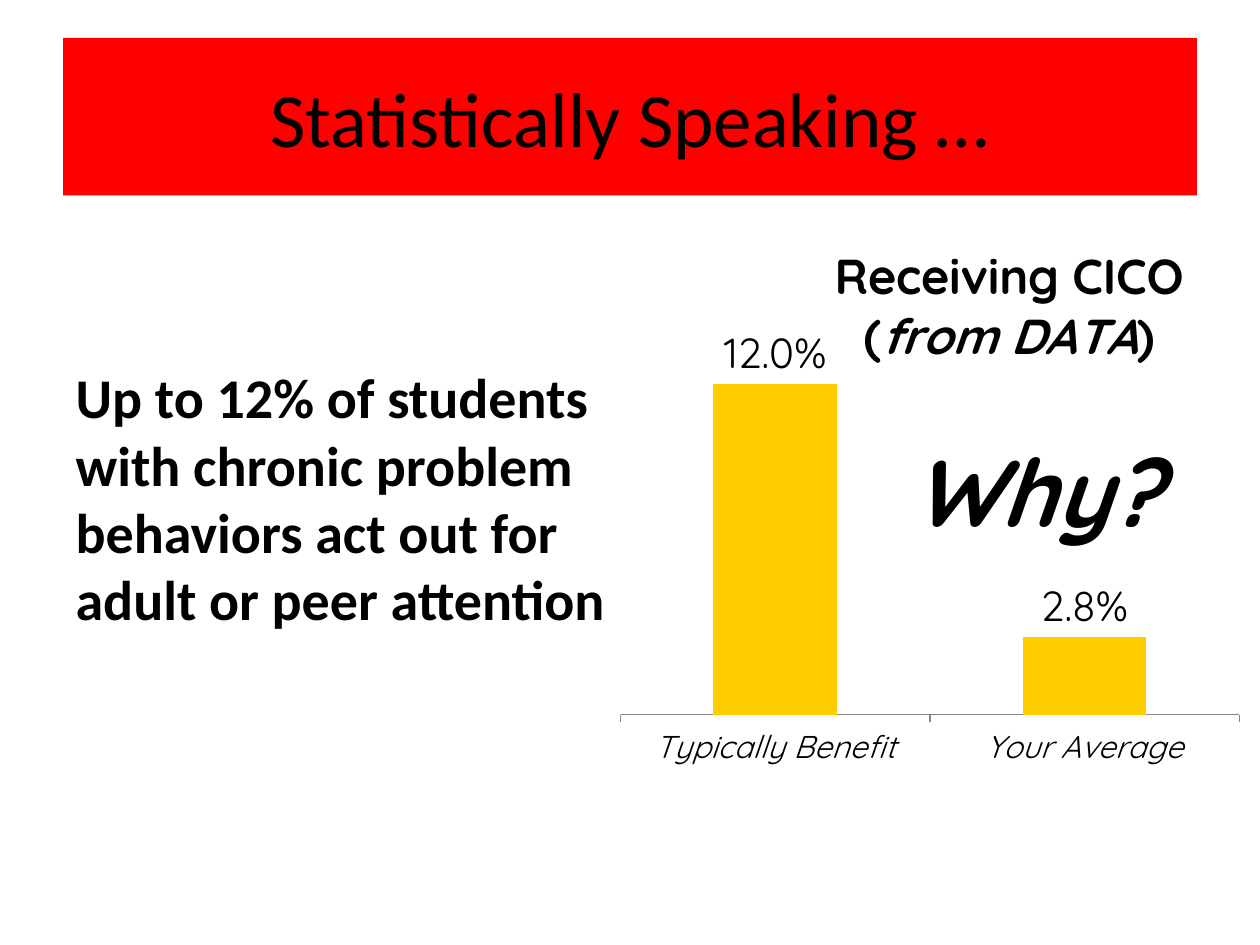
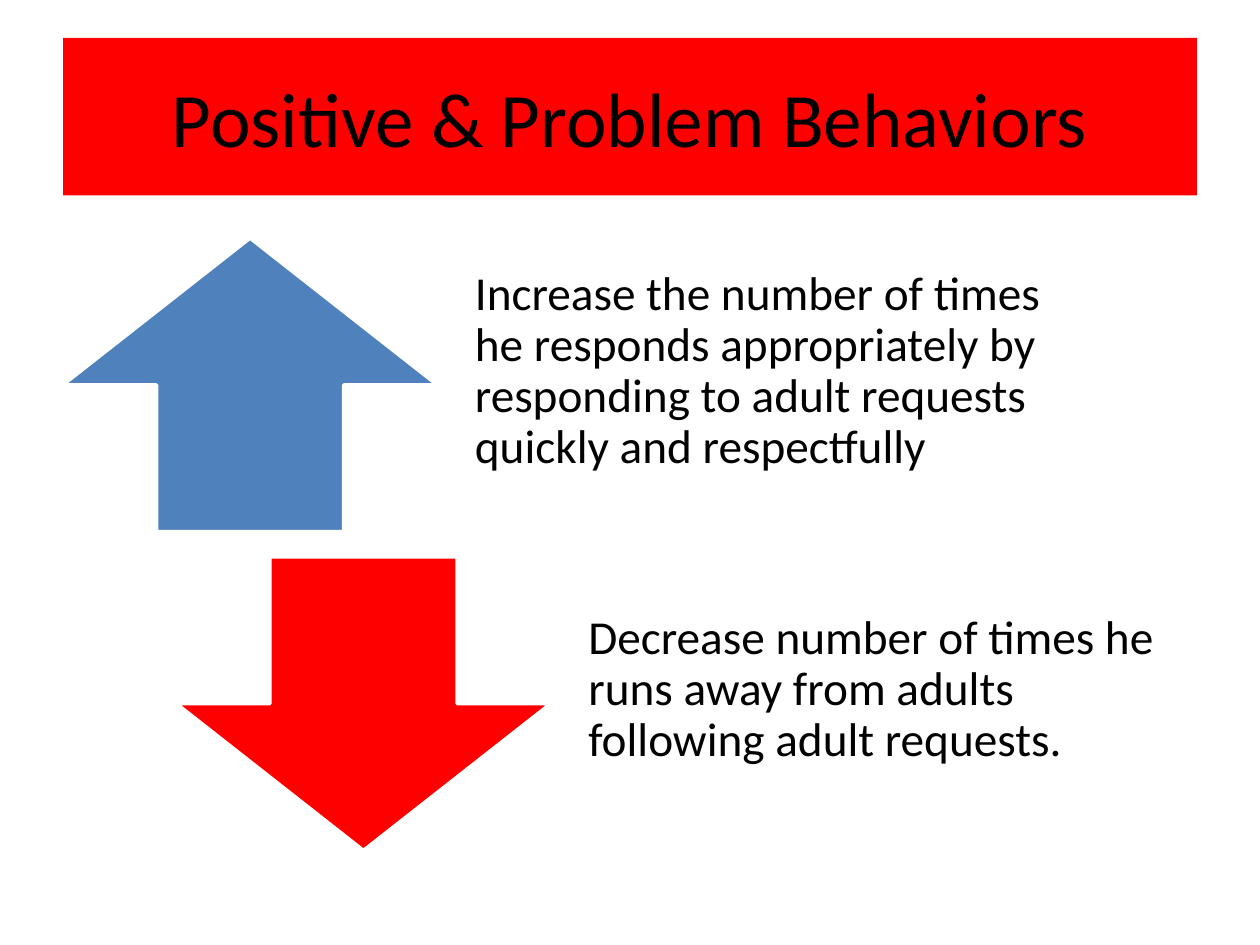
from lxml.etree import SubElement
from pptx import Presentation
from pptx.chart.data import CategoryChartData
from pptx.dml.color import RGBColor
from pptx.enum.chart import XL_CHART_TYPE, XL_LABEL_POSITION, XL_TICK_LABEL_POSITION, XL_TICK_MARK
from pptx.enum.shapes import MSO_SHAPE
from pptx.enum.text import MSO_ANCHOR, MSO_AUTO_SIZE, PP_ALIGN
from pptx.oxml.ns import qn
from pptx.util import Inches, Pt

# Shared look
RED = RGBColor(0xFF, 0x00, 0x00)
BLUE = RGBColor(0x4F, 0x81, 0xBD)
GOLD = RGBColor(0xFF, 0xCC, 0x00)
GREY = RGBColor(0x86, 0x86, 0x86)
BLACK = RGBColor(0x00, 0x00, 0x00)
WHITE = RGBColor(0xFF, 0xFF, 0xFF)
TEXT_FONT = "Calibri"
CHART_FONT = "Quicksand"
TITLE_AND_CONTENT, TITLE_ONLY = 1, 5

# Rows of arrow and text
ROW_TOP, ROW_STEP, ROW_HEIGHT = 1.89, 2.53, 2.33
ROW_LEFT, ROW_INDENT = 0.5, 0.9
ARROW_WIDTH, TEXT_OFFSET, TEXT_WIDTH = 2.97, 3.06, 5.04


def style_font(font, name, size, bold=False, italic=False):
    font.name = name
    font.size = Pt(size)
    font.bold = bold
    font.italic = italic
    font.color.rgb = BLACK


def place(shape, left, top, width, height):
    shape.left, shape.top = Inches(left), Inches(top)
    shape.width, shape.height = Inches(width), Inches(height)


def add_page(deck, layout, title):
    """Add a page with the red title band."""
    page = deck.slides.add_slide(deck.slide_layouts[layout])
    band = page.shapes.title
    place(band, 0.5, 0.3, 9, 1.25)
    band.fill.solid()
    band.fill.fore_color.rgb = RED
    frame = band.text_frame
    frame.text = title
    frame.auto_size = MSO_AUTO_SIZE.NONE
    frame.vertical_anchor = MSO_ANCHOR.MIDDLE
    para = frame.paragraphs[0]
    para.alignment = PP_ALIGN.CENTER
    style_font(para.font, TEXT_FONT, 44)
    return page


def fill_body(page, text):
    """Write the statement in the body placeholder, without a bullet."""
    body = page.placeholders[1]
    place(body, 0.5, 2.83, 4.75, 3.78)
    body.text_frame.text = text
    body.text_frame.auto_size = MSO_AUTO_SIZE.NONE
    para = body.text_frame.paragraphs[0]
    properties = para._p.get_or_add_pPr()
    properties.set("marL", "0")
    properties.set("indent", "0")
    SubElement(properties, qn("a:buNone"))
    para.space_before = Pt(0)
    style_font(para.font, TEXT_FONT, 32, bold=True)


def set_layout(part, position, **values):
    """Give a chart part a manual layout, in fractions of the chart."""
    for previous in part.findall(qn("c:layout")):
        part.remove(previous)
    layout = SubElement(part, qn("c:layout"))
    part.insert(position, layout)
    manual = SubElement(layout, qn("c:manualLayout"))
    for tag, value in values.items():
        SubElement(manual, qn(f"c:{tag}")).set("val", str(value))


def add_chart_title(chart):
    title = chart.chart_title
    frame = title.text_frame
    lines = [[("Receiving CICO", False)],
             [("(", False), ("from DATA", True), (")", False)]]
    for index, spans in enumerate(lines):
        para = frame.add_paragraph() if index else frame.paragraphs[0]
        for text, italic in spans:
            span = para.add_run()
            span.text = text
            style_font(span.font, CHART_FONT, 28, bold=True, italic=italic)
    # The layout follows the title text
    set_layout(title._element, 1, xMode="edge", yMode="edge", x=0.34, y=0.02)


def add_benefit_chart(page):
    data = CategoryChartData(number_format="0.0%")
    data.categories = ["Typically Benefit", "Your Average"]
    data.add_series("Series 1", [0.12, 0.028])
    chart = page.shapes.add_chart(
        XL_CHART_TYPE.COLUMN_CLUSTERED, Inches(4.92), Inches(1.81),
        Inches(4.92), Inches(4.44), data).chart
    chart.has_legend = False
    style_font(chart.font, CHART_FONT, 18)
    add_chart_title(chart)

    # Axes
    values = chart.value_axis
    values.minimum_scale, values.maximum_scale = 0, 0.14
    values.has_major_gridlines = False
    values.visible = False
    categories = chart.category_axis
    categories.major_tick_mark = XL_TICK_MARK.OUTSIDE
    categories.tick_label_position = XL_TICK_LABEL_POSITION.LOW
    categories.format.line.color.rgb = GREY
    style_font(categories.tick_labels.font, CHART_FONT, 18, italic=True)

    # Columns and their labels
    plot = chart.plots[0]
    plot.gap_width = 150
    plot.vary_by_categories = False
    columns = plot.series[0].format.fill
    columns.solid()
    columns.fore_color.rgb = GOLD
    plot.has_data_labels = True
    labels = plot.data_labels
    labels.show_value = True
    labels.number_format = "0.0%"
    labels.number_format_is_linked = False
    labels.position = XL_LABEL_POSITION.OUTSIDE_END
    style_font(labels.font, CHART_FONT, 24)

    # Plot area
    area = chart._chartSpace.find(f".//{qn('c:plotArea')}")
    set_layout(area, 0, layoutTarget="inner", xMode="edge", yMode="edge",
               x=0, y=0.18, w=1, h=0.69)


def add_question(page, text):
    box = page.shapes.add_textbox(Inches(7.06), Inches(3.39), Inches(2.32), Inches(1.01))
    frame = box.text_frame
    frame.text = text
    frame.word_wrap = False
    frame.auto_size = MSO_AUTO_SIZE.SHAPE_TO_FIT_TEXT
    para = frame.paragraphs[0]
    para.alignment = PP_ALIGN.CENTER
    style_font(para.font, CHART_FONT, 54, bold=True, italic=True)


def add_goal(page, row, arrow_kind, color, text):
    """Add an arrow with its goal; each row steps down and to the right."""
    left, top = ROW_LEFT + row * ROW_INDENT, ROW_TOP + row * ROW_STEP
    arrow = page.shapes.add_shape(arrow_kind, Inches(left), Inches(top),
                                  Inches(ARROW_WIDTH), Inches(ROW_HEIGHT))
    arrow.shadow.inherit = False
    arrow.fill.solid()
    arrow.fill.fore_color.rgb = color
    arrow.line.color.rgb = WHITE
    arrow.line.width = Pt(2)

    box = page.shapes.add_textbox(Inches(left + TEXT_OFFSET), Inches(top),
                                  Inches(TEXT_WIDTH), Inches(ROW_HEIGHT))
    frame = box.text_frame
    frame.text = text
    frame.word_wrap = True
    frame.vertical_anchor = MSO_ANCHOR.MIDDLE
    frame.margin_left = frame.margin_right = frame.margin_bottom = Inches(0.21)
    frame.margin_top = 0
    para = frame.paragraphs[0]
    para.line_spacing = 0.9
    style_font(para.font, TEXT_FONT, 27)


def main():
    deck = Presentation()
    deck.slide_width, deck.slide_height = Inches(10), Inches(7.5)

    # Statistics
    page = add_page(deck, TITLE_AND_CONTENT, "Statistically Speaking …")
    fill_body(page, "Up to 12% of students with chronic problem behaviors "
                    "act out for adult or peer attention")
    add_benefit_chart(page)
    add_question(page, "Why?")

    # Behavior goals
    page = add_page(deck, TITLE_ONLY, "Positive & Problem Behaviors")
    goals = [
        (MSO_SHAPE.UP_ARROW, BLUE,
         "Increase the number of times he responds appropriately by "
         "responding to adult requests quickly and respectfully"),
        (MSO_SHAPE.DOWN_ARROW, RED,
         "Decrease number of times he runs away from adults "
         "following adult requests."),
    ]
    for row, goal in enumerate(goals):
        add_goal(page, row, *goal)

    deck.save("out.pptx")


if __name__ == "__main__":
    main()
